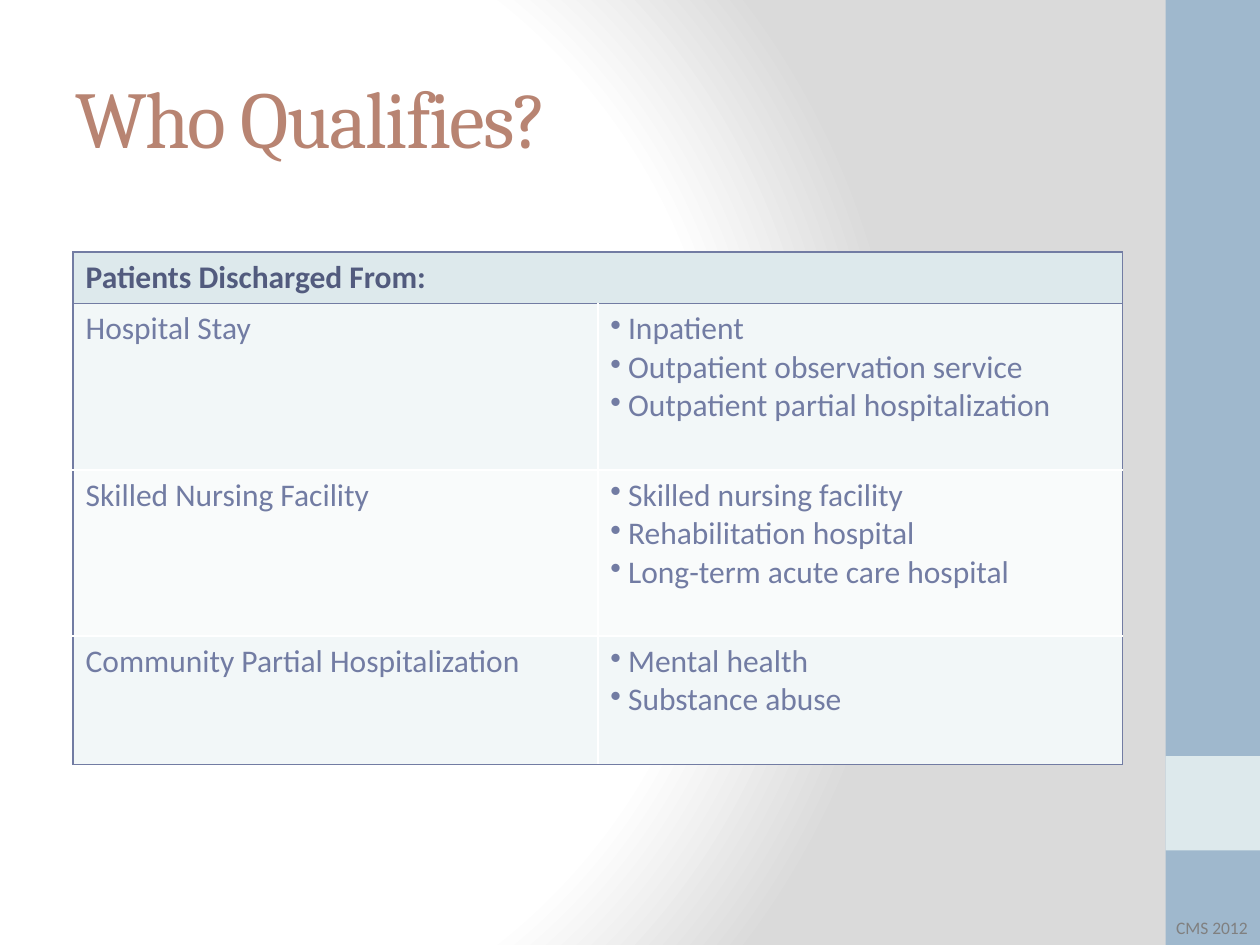
from pptx import Presentation
from pptx import util as u
from pptx.dml.color import RGBColor
from pptx.enum import shapes, text
from pptx.oxml import parse_xml
from pptx.oxml.ns import nsdecls, qn

BLUE = RGBColor(0x9F, 0xB8, 0xCD)
PALE = RGBColor(0xDD, 0xE9, 0xEC)
CLAY = RGBColor(0xB8, 0x84, 0x72)
INDIGO = RGBColor(0x72, 0x7C, 0xA3)
DARK_INDIGO = RGBColor(0x52, 0x5B, 0x7E)
GRAY = RGBColor(0x80, 0x80, 0x80)
WHITE = RGBColor(0xFF, 0xFF, 0xFF)
SILVER = RGBColor(0xDA, 0xDA, 0xDA)
BANDS = [RGBColor(0xF2, 0xF7, 0xF8), RGBColor(0xF9, 0xFB, 0xFB)]

TITLE = {"size": u.Pt(46), "name": "Cambria", "color": CLAY}
HEADING = {"size": u.Pt(18), "name": "Calibri", "color": DARK_INDIGO, "bold": True}
BODY = HEADING | {"color": INDIGO, "bold": False}
CREDIT = {"size": u.Pt(10), "name": "Calibri", "color": GRAY}


def write(frame, lines, look, bulleted=False):
    frame.text = "\n".join(lines)
    frame.word_wrap = True
    for line in frame.paragraphs:
        font = line.runs[0].font
        for key, value in look.items():
            if key == "color":
                font.color.rgb = value
            else:
                setattr(font, key, value)
        if bulleted:
            props = line._p.get_or_add_pPr()
            props.set("marL", str(u.Inches(0.14)))
            props.set("indent", str(-u.Inches(0.14)))
            props.append(parse_xml(f'<a:buChar {nsdecls("a")} char="•"/>'))


def paint(cell, color, edges):
    props = cell._tc.get_or_add_tcPr()
    for side, edge in zip("LRTB", edges):
        props.append(parse_xml(
            f'<a:ln{side} {nsdecls("a")} w="{u.Pt(1)}"><a:solidFill>'
            f'<a:srgbClr val="{edge}"/></a:solidFill></a:ln{side}>'))
    cell.fill.solid()
    cell.fill.fore_color.rgb = color


deck = Presentation()
deck.slide_width, deck.slide_height = u.Inches(10), u.Inches(7.5)
W, H = deck.slide_width, deck.slide_height
slide = deck.slides.add_slide(deck.slide_layouts[6])

slide.background.fill.gradient()
glow = next(slide._element.iter(qn("a:gradFill")))
stops = "".join(
    f'<a:gs pos="{share * 1000}"><a:srgbClr val="{color}"/></a:gs>'
    for share, color in [(0, WHITE), (75, WHITE), (100, SILVER)])
glow.getparent().replace(glow, parse_xml(
    f'<a:gradFill {nsdecls("a")} rotWithShape="1"><a:gsLst>{stops}</a:gsLst>'
    '<a:path path="circle"><a:fillToRect l="20000" t="50000" r="100000" b="50000"/>'
    '</a:path></a:gradFill>'))

band_width = int(W * 0.075)
for top, height, color in [(0, H, BLUE), (int(H * 0.8), int(H * 0.1), PALE)]:
    sidebar = slide.shapes.add_shape(
        shapes.MSO_SHAPE.RECTANGLE, W - band_width, top, band_width, height)
    sidebar.shadow.inherit = False
    sidebar.fill.solid()
    sidebar.fill.fore_color.rgb = color
    sidebar.line.fill.background()

title = slide.shapes.add_textbox(
    int(W * 0.05), int(H * 0.04), u.Inches(8.33), u.Inches(1.25)).text_frame
title.vertical_anchor = text.MSO_ANCHOR.MIDDLE
write(title, ["Who Qualifies?"], TITLE)
title.paragraphs[0].runs[0].font._element.set("spc", "-100")

settings = [
    ("Hospital Stay",
     ["Inpatient", "Outpatient observation service", "Outpatient partial hospitalization"]),
    ("Skilled Nursing Facility",
     ["Skilled nursing facility", "Rehabilitation hospital", "Long-term acute care hospital"]),
    ("Community Partial Hospitalization", ["Mental health", "Substance abuse"]),
]
row_heights = [0.41, 1.32, 1.32, 1.02]
discharges = slide.shapes.add_table(
    len(row_heights), 2, u.Inches(0.58), u.Inches(2),
    u.Inches(8.33), u.Inches(sum(row_heights))).table
for row, height in zip(discharges.rows, row_heights):
    row.height = u.Inches(height)

for heading in discharges.rows[0].cells:
    paint(heading, PALE, [INDIGO] * 4)
discharges.cell(0, 0).merge(discharges.cell(0, 1))
write(discharges.cell(0, 0).text_frame, ["Patients Discharged From:"], HEADING)

for r, (facility, services) in enumerate(settings, 1):
    above = INDIGO if r == 1 else WHITE
    below = INDIGO if r == len(settings) else WHITE
    for c, lines in enumerate([[facility], services]):
        cell = discharges.cell(r, c)
        sides = [WHITE, INDIGO] if c else [INDIGO, WHITE]
        paint(cell, BANDS[(r - 1) % 2], sides + [above, below])
        write(cell.text_frame, lines, BODY, bulleted=c == 1)

credit = slide.shapes.add_textbox(
    W - u.Inches(2.55), H - u.Inches(0.27), u.Inches(2.55), u.Inches(0.27)).text_frame
write(credit, ["CMS 2012"], CREDIT)
credit.paragraphs[0].alignment = text.PP_ALIGN.RIGHT

deck.save("out.pptx")
